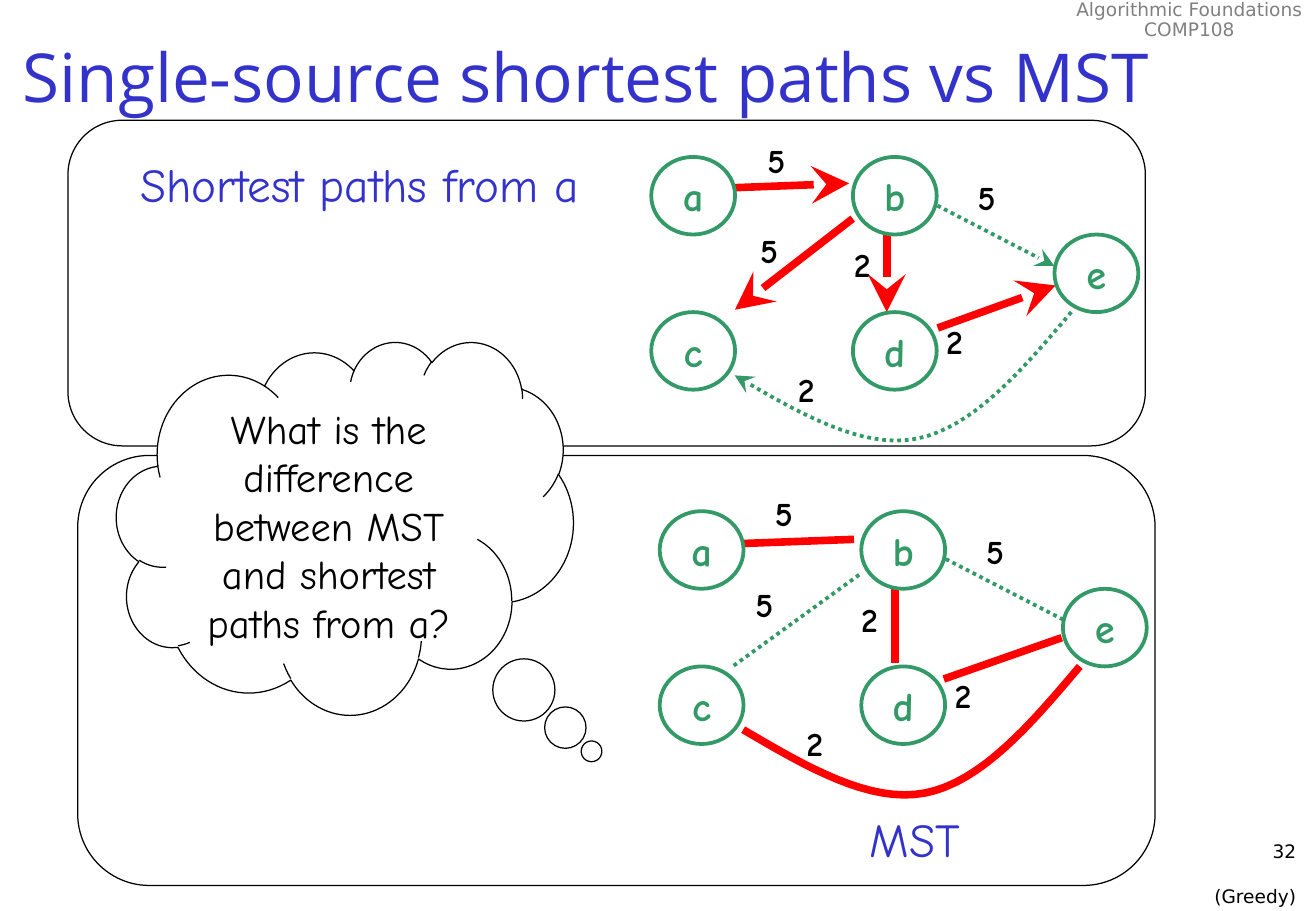
from dataclasses import dataclass
from pptx import Presentation, util as u
from pptx.dml.color import RGBColor as Rgb
from pptx.enum import dml, shapes, text
from pptx.oxml import ns, xmlchemy as xml

Pt = u.Pt
Form = shapes.MSO_SHAPE
Side = text.PP_ALIGN
Mid = text.MSO_ANCHOR.MIDDLE
Top = text.MSO_ANCHOR.TOP


@dataclass(frozen=True)
class Theme:
    blue: str = "3333CC"
    green: str = "339966"
    red: str = "FF0000"
    black: str = "000000"
    gray: str = "808080"
    white: str = "FFFFFF"
    head: str = "Open Sans"
    body: str = "Comic Neue"
    note: str = "DejaVu Sans"
    title: int = 40
    label: int = 28
    name: int = 24
    cost: int = 20
    small: int = 11
    thin: float = 0.75
    line: float = 2.25
    bold: float = 4.5


def apply(item, form):
    for key, val in form.items():
        setattr(item, key, val)


def bezier(a, b, c, d, steps=16):
    """Points of a cubic curve after its start."""
    for i in range(1, steps + 1):
        t = i / steps
        s = 1 - t
        yield tuple(s**3 * p + 3 * s * s * t * q + 3 * s * t * t * r + t**3 * w
                    for p, q, r, w in zip(a, b, c, d))


class Board:
    def __init__(self, slide, theme):
        self.slide = slide
        self.theme = theme

    def fill_text(self, item, lines, font, size, color, align=Side.LEFT, anchor=Top,
                  wrap=True, bold=False, **para):
        frame = item.text_frame
        apply(frame, {"word_wrap": wrap, "vertical_anchor": anchor})
        for i, line in enumerate(lines):
            par = frame.paragraphs[0] if i == 0 else frame.add_paragraph()
            apply(par, {"alignment": align, **para})
            run = par.add_run()
            run.text = line
            apply(run.font, {"name": font, "size": Pt(size), "bold": bold})
            run.font.color.rgb = Rgb.from_string(color)

    def label(self, box, lines, font, size, color, **form):
        item = self.slide.shapes.add_textbox(*map(Pt, box))
        self.fill_text(item, lines, font, size, color, **form)

    def stroke(self, item, color, width, dots=False, arrow=False):
        line = item.line
        line.color.rgb = Rgb.from_string(color)
        line.width = Pt(width)
        if dots:
            line.dash_style = dml.MSO_LINE.ROUND_DOT
        if arrow:
            tip = xml.OxmlElement("a:tailEnd")
            for key, val in {"type": "stealth", "w": "lg", "len": "lg"}.items():
                tip.set(key, val)
            item._element.spPr.find(ns.qn("a:ln")).append(tip)

    def shape(self, kind, box, color, width, fill=None):
        item = self.slide.shapes.add_shape(kind, *map(Pt, box))
        self.paint(item, fill)
        self.stroke(item, color, width)
        return item

    def paint(self, item, fill):
        item.shadow.inherit = False
        if fill:
            item.fill.solid()
            item.fill.fore_color.rgb = Rgb.from_string(fill)
        else:
            item.fill.background()

    def edge(self, ends, **form):
        item = self.slide.shapes.add_connector(shapes.MSO_CONNECTOR.STRAIGHT, *map(Pt, ends))
        self.stroke(item, **form)
        item._element.spPr.append(xml.OxmlElement("a:effectLst"))

    def curve(self, knots, **form):
        dots = [*bezier(*knots[:4]), *bezier(*knots[3:])]
        trace = self.slide.shapes.build_freeform(*map(Pt, knots[0]))
        trace.add_line_segments([(Pt(x), Pt(y)) for x, y in dots], close=False)
        item = trace.convert_to_shape()
        self.paint(item, self.theme.white)
        self.stroke(item, **form)

    def graph(self, left, top, bend, edges, costs, arrow):
        look = self.theme
        kinds = {True: {"color": look.red, "width": look.bold},
                 False: {"color": look.green, "width": look.line, "dots": True}}
        # Edges: the curve from e to c, then the straight ones
        self.curve([(left + x, top + y) for x, y in BEND], arrow=arrow, **kinds[bend])
        for used, *ends in edges:
            self.edge(ends, arrow=arrow, **kinds[used])
        # Nodes on a grid of half rows
        for name, (col, row) in NODES.items():
            box = (left + col * 119.5, top + row * 46, 49.7, 46)
            item = self.shape(Form.OVAL, box, look.green, look.line, look.white)
            self.fill_text(item, [name], look.body, look.name, look.green,
                           align=Side.CENTER, anchor=Mid, wrap=False, bold=True)
        # Edge costs
        for cost, x, y in costs:
            self.label((x, y, 26.6, 31), [cost], look.body, look.cost, look.black,
                       wrap=False, bold=True)


NODES = {"a": (0, 0), "b": (1, 0), "c": (0, 2), "d": (1, 2), "e": (2, 1)}
BEND = [(249, 92), (220, 126.5), (190.5, 160.5), (157.5, 167),
        (124.5, 173.5), (87, 151.5), (49.5, 129.5)]

# Each edge: chosen or not, start, end
PATHS = [(True, 426.2, 111.6, 503.3, 108.7), (False, 535.7, 111.6, 625, 157.7),
         (True, 555.8, 194.4, 625.7, 169.2), (True, 525.6, 139, 525.6, 185),
         (True, 505.4, 129.6, 435.6, 183.6)]
TREE = [(False, 540.7, 321.1, 630, 367.2), (True, 559.4, 402.5, 629.3, 378),
        (True, 429.1, 322.6, 506.2, 319.7), (True, 530.6, 347.8, 530.6, 393.1),
        (False, 434.9, 394.6, 510.5, 339.8)]

# Each cost: value, left, top
PATH_COSTS = [("5", 447.8, 79.2), ("5", 572.4, 101.5), ("5", 443.5, 132.5),
              ("2", 499, 141.1), ("2", 553.7, 186.5), ("2", 465.8, 215.3)]
TREE_COSTS = [("5", 452.2, 288.7), ("5", 577.4, 311), ("5", 440.6, 342.7),
              ("2", 503.3, 351.4), ("2", 558.7, 396.7), ("2", 470.9, 424.8)]


def main():
    deck = Presentation()
    apply(deck, {"slide_width": Pt(780), "slide_height": Pt(540)})
    look = Theme()
    board = Board(deck.slides.add_slide(deck.slide_layouts[6]), look)

    # Header, footer and title
    board.label((630, -3, 150, 31), ["Algorithmic Foundations", "COMP108"], look.note,
                look.small, look.gray, align=Side.CENTER, wrap=False, line_spacing=0.9)
    board.label((612.7, 494.6, 162.7, 36), ["32", "(Greedy)"], look.note,
                look.small, look.black, align=Side.RIGHT, space_after=Pt(13))
    board.label((6.5, 0, 773, 90), ["Single-source shortest paths vs MST"], look.head,
                look.title, look.blue, anchor=Mid)

    # Panels with their captions
    for box in ((40.3, 71.3, 638.6, 193), (46.1, 270, 638.6, 254.9)):
        board.shape(Form.ROUNDED_RECTANGLE, box, look.black, look.thin)
    board.label((0, 88.6, 350, 41), ["Shortest paths from a"], look.body,
                look.label, look.blue, align=Side.RIGHT)
    board.label((418.3, 476.6, 247.7, 41), ["MST"], look.body,
                look.label, look.blue, align=Side.CENTER)

    # Graphs
    board.graph(386, 93, False, PATHS, PATH_COSTS, arrow=True)
    board.graph(391, 303, True, TREE, TREE_COSTS, arrow=False)

    # Question
    cloud = board.shape(Form.CLOUD_CALLOUT, (69.1, 202.3, 270.7, 221), look.black,
                        look.thin, look.white)
    for i, shift in enumerate((0.54, 0.6)):
        cloud.adjustments[i] = shift
    board.fill_text(cloud, ["What is the difference between MST and shortest paths from a?"],
                    look.body, look.name, look.black, align=Side.CENTER)

    deck.save("out.pptx")


if __name__ == "__main__":
    main()
